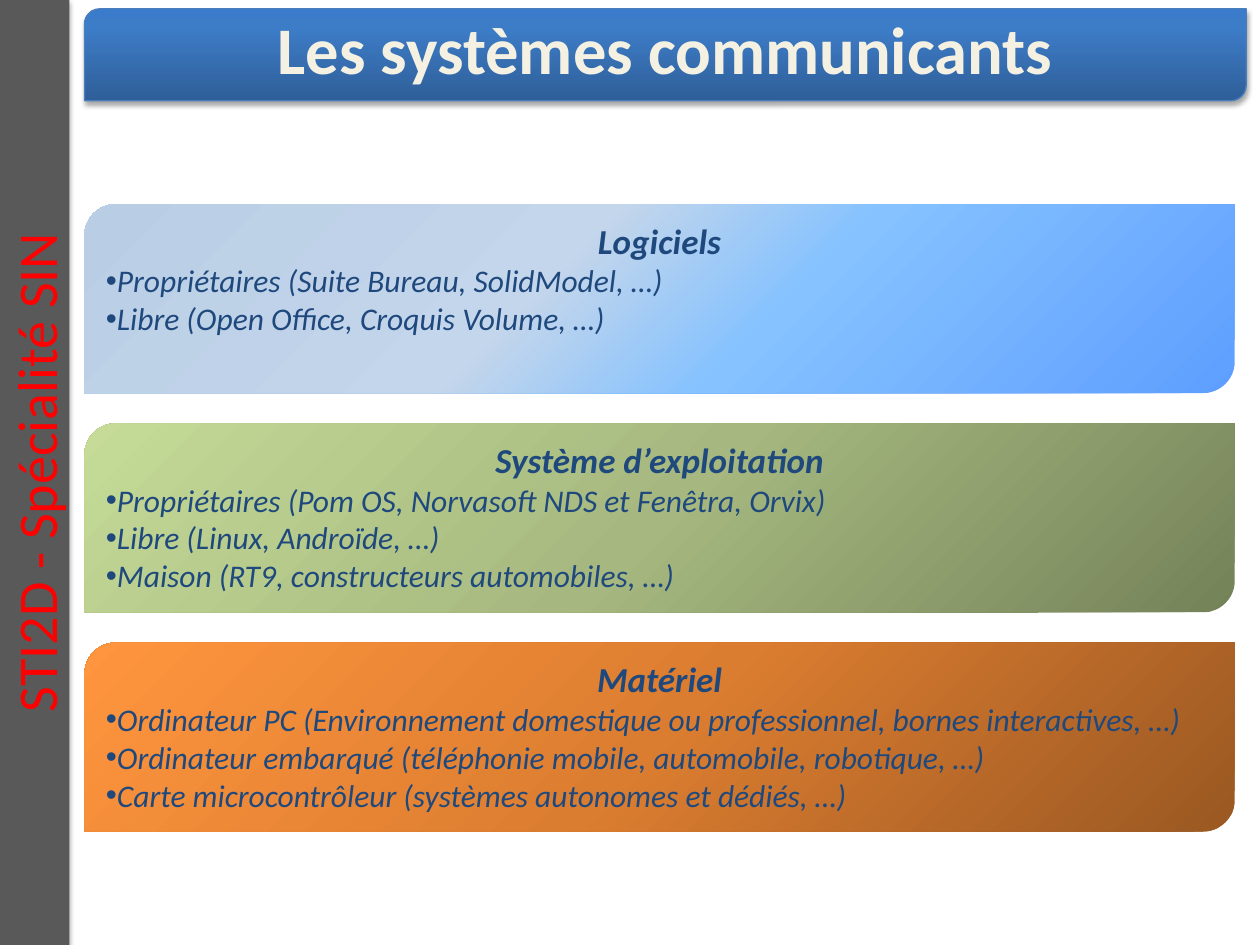
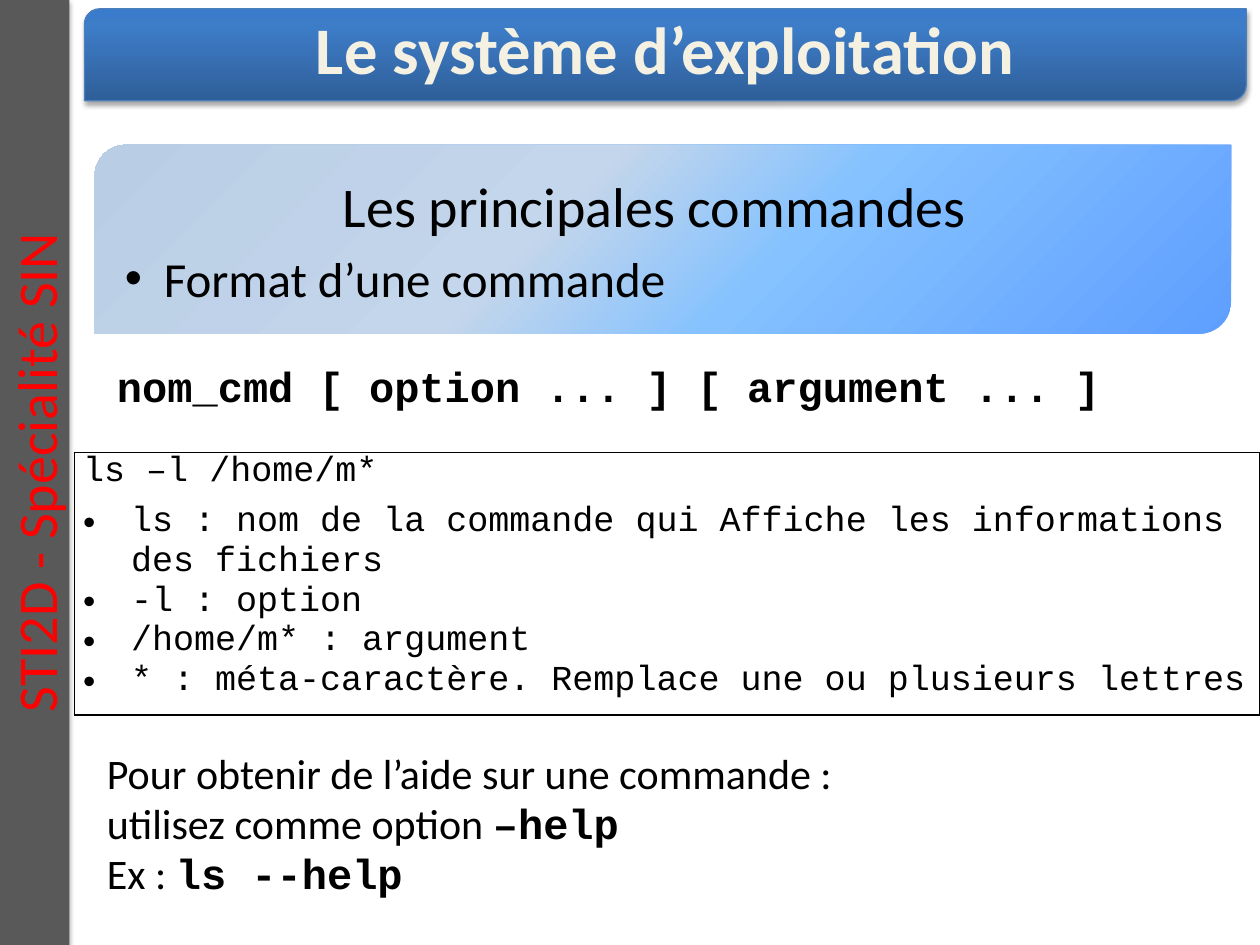
from dataclasses import dataclass

from lxml import etree
from pptx import Presentation, util as u
from pptx.dml.color import RGBColor
from pptx.enum import shapes, text
from pptx.oxml import ns

Inches, Pt = u.Inches, u.Pt
ALIGN, ANCHOR, FIT = text.PP_ALIGN, text.MSO_ANCHOR, text.MSO_AUTO_SIZE


@dataclass(frozen=True)
class Theme:
    font: str = "Calibri"
    code_font: str = "Courier New"
    black: str = "000000"
    navy: str = "1F497D"
    cream: str = "F4F1E3"
    red: str = "FF0000"
    sidebar: str = "595959"
    band_line: str = "4B7EBC"
    band: tuple = ((0, "2F5F99"), (80, "3D7CC7"), (100, "3A7CCB"))
    blue: tuple = ((0, "5E9EFF"), (40, "85C2FF"), (60, "C4D6EB"), (100, "B9CDE5"))
    green: tuple = ((0, "748259"), (50, "A6B87F"), (100, "C5DB97"))
    orange: tuple = ((0, "9A5822"), (50, "DB7D30"), (100, "FF953E"))
    title_size: int = 38
    heading_size: int = 32
    subheading_size: int = 28
    text_size: int = 24
    card_heading_size: int = 20
    code_size: int = 20
    card_size: int = 18


THEME = Theme()
BAND_AREA = (0.67, 0.07, 9.22, 0.73)
CARD_LEFT, CARD_WIDTH, CARD_HEIGHT = 0.67, 9.13, 1.5
CARDS_TOP, CARD_STEP = 1.62, 1.74

CARDS = [
    ("Logiciels", THEME.blue, [
        "Propriétaires (Suite Bureau, SolidModel, …)",
        "Libre (Open Office, Croquis Volume, …)"]),
    ("Système d’exploitation", THEME.green, [
        "Propriétaires (Pom OS, Norvasoft NDS et Fenêtra, Orvix)",
        "Libre (Linux, Androïde, …)",
        "Maison (RT9, constructeurs automobiles, …)"]),
    ("Matériel", THEME.orange, [
        "Ordinateur PC (Environnement domestique ou professionnel, bornes interactives, …)",
        "Ordinateur embarqué (téléphonie mobile, automobile, robotique, …)",
        "Carte microcontrôleur (systèmes autonomes et dédiés, …)"]),
]
COMMAND_PARTS = [
    "ls : nom de la commande qui Affiche les informations des fichiers",
    "-l : option",
    "/home/m* : argument",
    "* : méta-caractère. Remplace une ou plusieurs lettres",
]


def add_xml(parent, tag, **attributes):
    values = {name: str(value) for name, value in attributes.items()}
    return etree.SubElement(parent, ns.qn(tag), values)


def area(left, top, width, height):
    return Inches(left), Inches(top), Inches(width), Inches(height)


def move(shape, *place):
    shape.left, shape.top, shape.width, shape.height = area(*place)


def fill_gradient(shape, stops, angle):
    """Fill with (percent, colour) stops; the angle is clockwise in degrees."""
    shape.fill.gradient()
    gradient = shape.fill._xPr.find(ns.qn("a:gradFill"))
    for child in list(gradient):
        gradient.remove(child)
    stop_list = add_xml(gradient, "a:gsLst")
    for percent, colour in stops:
        stop = add_xml(stop_list, "a:gs", pos=percent * 1000)
        add_xml(stop, "a:srgbClr", val=colour)
    add_xml(gradient, "a:lin", ang=angle * 60000, scaled=0)


def drop_shadow(shape):
    effects = shape._element.spPr.find(ns.qn("a:effectLst"))
    shadow = add_xml(effects, "a:outerShdw", blurRad=Pt(3.1), dist=Pt(1.8),
                     dir=90 * 60000, algn="t", rotWithShape=0)
    colour = add_xml(shadow, "a:srgbClr", val=THEME.black)
    add_xml(colour, "a:alpha", val=35000)


def add_plain_shape(slide, kind, *place):
    shape = slide.shapes.add_shape(kind, *area(*place))
    shape.shadow.inherit = False
    shape.line.fill.background()
    return shape


def add_panel(slide, stops, angle, *place):
    kind = shapes.MSO_SHAPE.ROUND_2_DIAG_RECTANGLE
    panel = add_plain_shape(slide, kind, *place)
    fill_gradient(panel, stops, angle)
    return panel


def add_span(para, words, size, colour=THEME.black, font=THEME.font,
             bold=False, italic=False):
    span = para.add_run()
    span.text = words
    span.font.name, span.font.size = font, Pt(size)
    span.font.bold, span.font.italic = bold, italic
    span.font.color.rgb = RGBColor.from_string(colour)


def next_para(frame, align=ALIGN.LEFT):
    """Return the empty first paragraph, or a new one after the others."""
    para = frame.paragraphs[0]
    if para.runs:
        para = frame.add_paragraph()
    para.alignment = align
    return para


def set_indent(para, margin, indent):
    properties = para._p.get_or_add_pPr()
    properties.set("marL", str(Inches(margin)))
    properties.set("indent", str(Inches(indent)))
    return properties


def add_bullet(para, margin=0, indent=0):
    properties = set_indent(para, margin, indent)
    add_xml(properties, "a:buFont", typeface="Arial")
    add_xml(properties, "a:buChar", char="•")


def add_text_box(slide, *place, wrap=True):
    frame = slide.shapes.add_textbox(*area(*place)).text_frame
    frame.word_wrap = wrap
    return frame


def add_title(slide, words):
    band = add_panel(slide, THEME.band, 270, *BAND_AREA)
    band.line.color.rgb = RGBColor.from_string(THEME.band_line)
    band.line.width = Pt(0.75)
    drop_shadow(band)
    title = slide.shapes.title
    slide.shapes._spTree.append(title._element)  # in front of the band
    move(title, *BAND_AREA)
    frame = title.text_frame
    frame.auto_size, frame.vertical_anchor = FIT.NONE, ANCHOR.BOTTOM
    frame.margin_top, frame.margin_bottom = 0, Inches(0.1)
    add_span(next_para(frame, ALIGN.CENTER), words, THEME.title_size,
             THEME.cream, bold=True)


def add_sidebar(slide):
    sidebar = add_plain_shape(slide, shapes.MSO_SHAPE.RECTANGLE, 0, 0, 0.55, 7.5)
    sidebar.fill.solid()
    sidebar.fill.fore_color.rgb = RGBColor.from_string(THEME.sidebar)
    drop_shadow(sidebar)
    frame = sidebar.text_frame
    frame.vertical_anchor = ANCHOR.MIDDLE
    frame._txBody.bodyPr.set("vert", "vert270")
    add_span(next_para(frame, ALIGN.CENTER), "STI2D - Spécialité SIN",
             THEME.heading_size, THEME.red)


def add_slide(deck, layout_index, title):
    slide = deck.slides.add_slide(deck.slide_layouts[layout_index])
    add_title(slide, title)
    add_sidebar(slide)
    return slide


def add_card(slide, top, heading, stops, items):
    card = add_panel(slide, stops, 225, CARD_LEFT, top, CARD_WIDTH, CARD_HEIGHT)
    frame = card.text_frame
    frame.vertical_anchor = ANCHOR.TOP
    add_span(next_para(frame, ALIGN.CENTER), heading, THEME.card_heading_size,
             THEME.navy, bold=True, italic=True)
    for item in items:
        para = next_para(frame)
        add_bullet(para)
        add_span(para, item, THEME.card_size, THEME.navy, italic=True)


def add_commands_heading(slide):
    add_panel(slide, THEME.blue, 225, 0.75, 1.15, 9.02, CARD_HEIGHT)
    body = slide.placeholders[1]
    slide.shapes._spTree.append(body._element)  # in front of the panel
    move(body, 0.39, 1.31, 9.61, 1.81)
    frame = body.text_frame
    frame.auto_size = FIT.NONE
    heading = next_para(frame, ALIGN.CENTER)
    heading.space_before = Pt(0)
    add_xml(set_indent(heading, 0.38, -0.38), "a:buNone")
    add_span(heading, "Les principales commandes", THEME.heading_size)
    item = next_para(frame)
    item.level = 1
    add_bullet(item, 0.81, -0.31)
    add_span(item, "Format d’une commande", THEME.subheading_size)


def add_cell_borders(cell):
    properties = cell._tc.get_or_add_tcPr()
    for index, side in enumerate(("a:lnL", "a:lnR", "a:lnT", "a:lnB")):
        line = add_xml(properties, side, w=Pt(1))
        add_xml(add_xml(line, "a:solidFill"), "a:srgbClr", val=THEME.black)
        properties.insert(index, line)


def add_command_table(slide):
    table = slide.shapes.add_table(1, 1, *area(0.59, 3.59, 9.41, 2.08)).table
    table.first_row = table.horz_banding = False
    cell = table.cell(0, 0)
    cell.fill.background()
    add_cell_borders(cell)
    cell.margin_left = cell.margin_right = Inches(0.07)
    cell.margin_top = cell.margin_bottom = 0
    frame = cell.text_frame
    command = next_para(frame)
    command.space_after = Pt(6)
    add_span(command, "ls –l /home/m*", THEME.code_size, font=THEME.code_font)
    for part in COMMAND_PARTS:
        para = next_para(frame)
        add_bullet(para, 0.38, -0.38)
        add_span(para, part, THEME.code_size, font=THEME.code_font)
    para.space_after = Pt(6)


def add_code(para, code):
    add_span(para, code, THEME.text_size, font=THEME.code_font, bold=True)


def add_help(slide):
    frame = add_text_box(slide, 0.75, 5.88, 6.01, 1.31, wrap=False)
    for words, code in (("Pour obtenir de l’aide sur une commande :", ""),
                        ("utilisez comme option ", "–help"),
                        ("Ex : ", "ls --help")):
        para = next_para(frame)
        add_span(para, words, THEME.text_size)
        if code:
            add_code(para, code)


def main():
    deck = Presentation()
    deck.slide_width, deck.slide_height = Inches(10), Inches(7.5)

    systems = add_slide(deck, 5, "Les systèmes communicants")
    for index, card in enumerate(CARDS):
        add_card(systems, CARDS_TOP + index * CARD_STEP, *card)

    commands = add_slide(deck, 1, "Le système d’exploitation")
    add_commands_heading(commands)
    syntax = add_text_box(commands, 0.83, 2.81, 8.82, 0.5)
    add_code(next_para(syntax), "nom_cmd [ option ... ] [ argument ... ]")
    add_command_table(commands)
    add_help(commands)

    deck.save("out.pptx")


if __name__ == "__main__":
    main()
